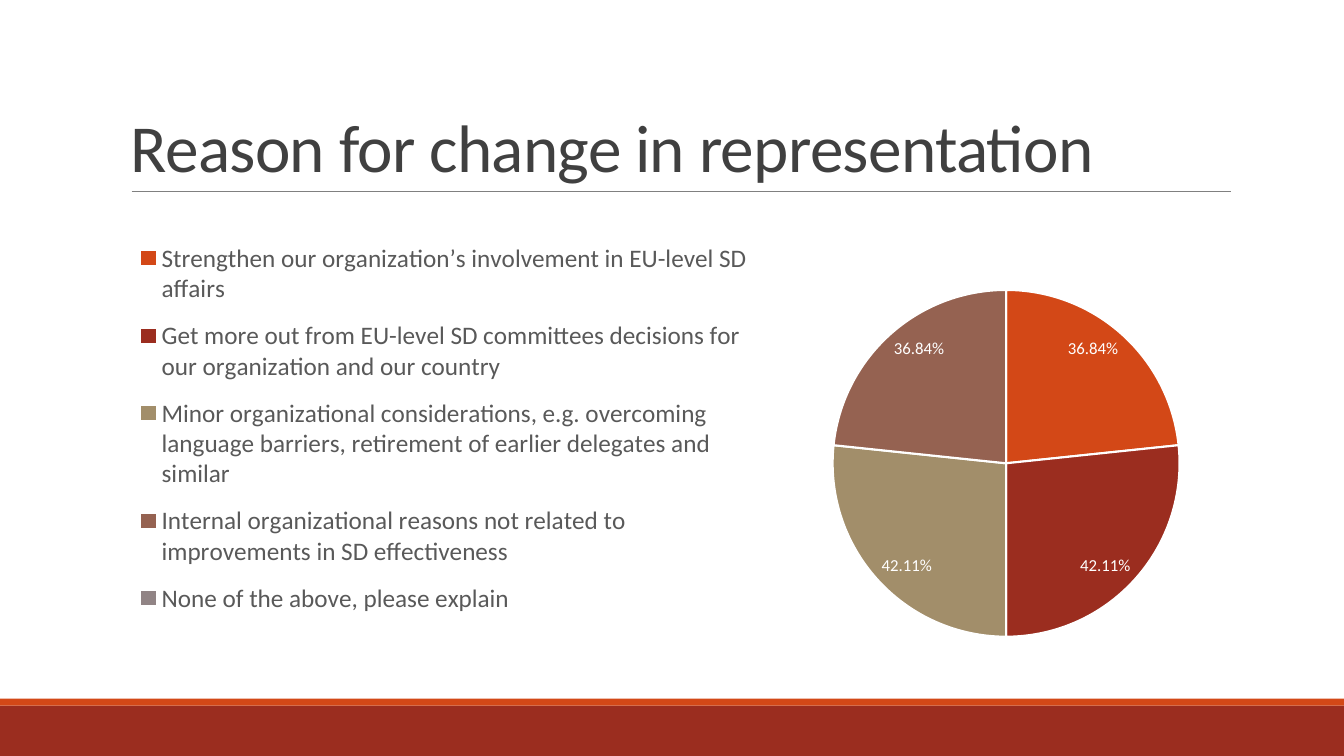
"""Build a slide with a pie chart of the reasons for a change in representation."""
from dataclasses import dataclass

from lxml import etree
from pptx import Presentation
from pptx.chart.data import CategoryChartData
from pptx.dml.color import RGBColor
from pptx.enum.chart import XL_CHART_TYPE, XL_LABEL_POSITION, XL_LEGEND_POSITION
from pptx.enum.shapes import MSO_CONNECTOR, MSO_SHAPE
from pptx.enum.text import MSO_ANCHOR
from pptx.oxml.ns import qn
from pptx.util import Inches, Pt

PIE = XL_CHART_TYPE.PIE
INSIDE_END = XL_LABEL_POSITION.INSIDE_END
LEGEND_BOTTOM = XL_LEGEND_POSITION.BOTTOM
STRAIGHT = MSO_CONNECTOR.STRAIGHT
RECTANGLE = MSO_SHAPE.RECTANGLE
ANCHOR_BOTTOM = MSO_ANCHOR.BOTTOM

SLIDE_WIDTH, SLIDE_HEIGHT = 13.33, 7.5


@dataclass(frozen=True)
class Theme:
    """Colours, type sizes and line widths."""
    font: str = "Calibri"
    orange: str = "D34817"
    red: str = "9B2D1F"
    title: str = "404040"
    legend: str = "595959"
    rule: str = "808080"
    white: str = "FFFFFF"
    title_size: float = 48
    legend_size: float = 18
    label_size: float = 12
    rule_width: float = 0.5
    slice_border: float = 1.5


@dataclass(frozen=True)
class Box:
    """A frame in shares of its container."""
    left: float
    top: float
    width: float
    height: float

    def on_slide(self) -> tuple:
        """Return the frame as lengths on the slide."""
        return (Inches(self.left * SLIDE_WIDTH), Inches(self.top * SLIDE_HEIGHT),
                Inches(self.width * SLIDE_WIDTH), Inches(self.height * SLIDE_HEIGHT))


@dataclass(frozen=True)
class Band:
    """A filled strip across the slide."""
    box: Box
    color: str


@dataclass(frozen=True)
class Reason:
    """One slice of the pie."""
    text: str
    share: float
    color: str


THEME = Theme()
TITLE = "Reason for change in representation"
TITLE_BOX = Box(0.09, 0.041, 0.825, 0.212)
RULE_BOX = Box(0.098, 0.253, 0.818, 0)
CHART_BOX = Box(0.1043, 0.3, 0.8177, 0.6013)
PLOT_BOX = Box(0.618, 0.139, 0.34, 0.763)
LEGEND_BOX = Box(0, 0, 0.553, 0.887)
BANDS = (
    Band(Box(0, 0.9333, 1, 0.0667), THEME.red),
    Band(Box(0, 0.924, 1, 0.0093), THEME.orange),
)
REASONS = (
    Reason("Strengthen our organization’s involvement in EU-level SD affairs",
           0.3684, THEME.orange),
    Reason("Get more out from EU-level SD committees decisions for our organization "
           "and our country", 0.4211, THEME.red),
    Reason("Minor organizational considerations, e.g. overcoming language barriers, "
           "retirement of earlier delegates and similar", 0.4211, "A28E6A"),
    Reason("Internal organizational reasons not related to improvements in SD "
           "effectiveness", 0.3684, "956251"),
    Reason("None of the above, please explain", 0, "918485"),
)


def style_font(font, size: float, color: str) -> None:
    """Set the typeface, size and colour of a font."""
    font.name = THEME.font
    font.size = Pt(size)
    font.color.rgb = RGBColor.from_string(color)


def draw_band(slide, band: Band) -> None:
    """Draw a strip without an outline."""
    shape = slide.shapes.add_shape(RECTANGLE, *band.box.on_slide())
    shape.shadow.inherit = False
    shape.fill.solid()
    shape.fill.fore_color.rgb = RGBColor.from_string(band.color)
    shape.line.fill.background()


def draw_rule(slide) -> None:
    """Draw the thin line under the title."""
    left, top, width, height = RULE_BOX.on_slide()
    rule = slide.shapes.add_connector(STRAIGHT, left, top, left + width, top + height)
    rule.line.color.rgb = RGBColor.from_string(THEME.rule)
    rule.line.width = Pt(THEME.rule_width)
    etree.SubElement(rule.element.spPr, qn("a:effectLst"))


def draw_title(slide) -> None:
    """Write the title at the foot of its box."""
    text_frame = slide.shapes.add_textbox(*TITLE_BOX.on_slide()).text_frame
    text_frame.word_wrap = True
    text_frame.vertical_anchor = ANCHOR_BOTTOM
    text_frame.text = TITLE
    paragraph = text_frame.paragraphs[0]
    paragraph.line_spacing = 0.85
    font = paragraph.runs[0].font
    style_font(font, THEME.title_size, THEME.title)
    paragraph.runs[0]._r.get_or_add_rPr().set("spc", "-50")


def make_layout(box: Box, inner: bool) -> etree._Element:
    """Return a manual layout for a part of the chart."""
    layout = etree.Element(qn("c:layout"))
    manual = etree.SubElement(layout, qn("c:manualLayout"))
    settings = [("layoutTarget", "inner")] if inner else []
    settings += [("xMode", "edge"), ("yMode", "edge"), ("x", box.left), ("y", box.top),
                 ("w", box.width), ("h", box.height)]
    for name, value in settings:
        etree.SubElement(manual, qn(f"c:{name}")).set("val", str(value))
    return layout


def place_chart_parts(chart) -> None:
    """Put the legend on the left and the pie on the right."""
    plot_area = chart.element.find(".//" + qn("c:plotArea"))
    legend = chart.element.find(".//" + qn("c:legend"))
    for part in (plot_area, legend):
        for layout in part.findall(qn("c:layout")):
            part.remove(layout)
    plot_area.insert(0, make_layout(PLOT_BOX, True))
    legend.find(qn("c:legendPos")).addnext(make_layout(LEGEND_BOX, False))


def draw_chart(slide) -> None:
    """Draw the pie with its labels and legend."""
    data = CategoryChartData(number_format="0.00%")
    data.categories = [reason.text for reason in REASONS]
    data.add_series("Series 1", [reason.share for reason in REASONS])
    chart = slide.shapes.add_chart(PIE, *CHART_BOX.on_slide(), data).chart
    chart.has_title = False
    chart.has_legend = True
    chart.legend.position = LEGEND_BOTTOM
    chart.legend.include_in_layout = False
    style_font(chart.legend.font, THEME.legend_size, THEME.legend)

    plot = chart.plots[0]
    plot.vary_by_categories = True
    plot.has_data_labels = True
    labels = plot.data_labels
    labels.show_value = True
    labels.show_percentage = False
    labels.number_format = "0.00%;;"
    labels.number_format_is_linked = False
    labels.position = INSIDE_END
    style_font(labels.font, THEME.label_size, THEME.white)

    for index, reason in enumerate(REASONS):
        slice_format = plot.series[0].points[index].format
        slice_format.fill.solid()
        slice_format.fill.fore_color.rgb = RGBColor.from_string(reason.color)
        slice_format.line.color.rgb = RGBColor.from_string(THEME.white)
        slice_format.line.width = Pt(THEME.slice_border)
    place_chart_parts(chart)


def main() -> None:
    """Build and save the presentation."""
    presentation = Presentation()
    presentation.slide_width = Inches(SLIDE_WIDTH)
    presentation.slide_height = Inches(SLIDE_HEIGHT)
    slide = presentation.slides.add_slide(presentation.slide_layouts[6])
    for band in BANDS:
        draw_band(slide, band)
    draw_rule(slide)
    draw_title(slide)
    draw_chart(slide)
    presentation.save("out.pptx")


if __name__ == "__main__":
    main()
